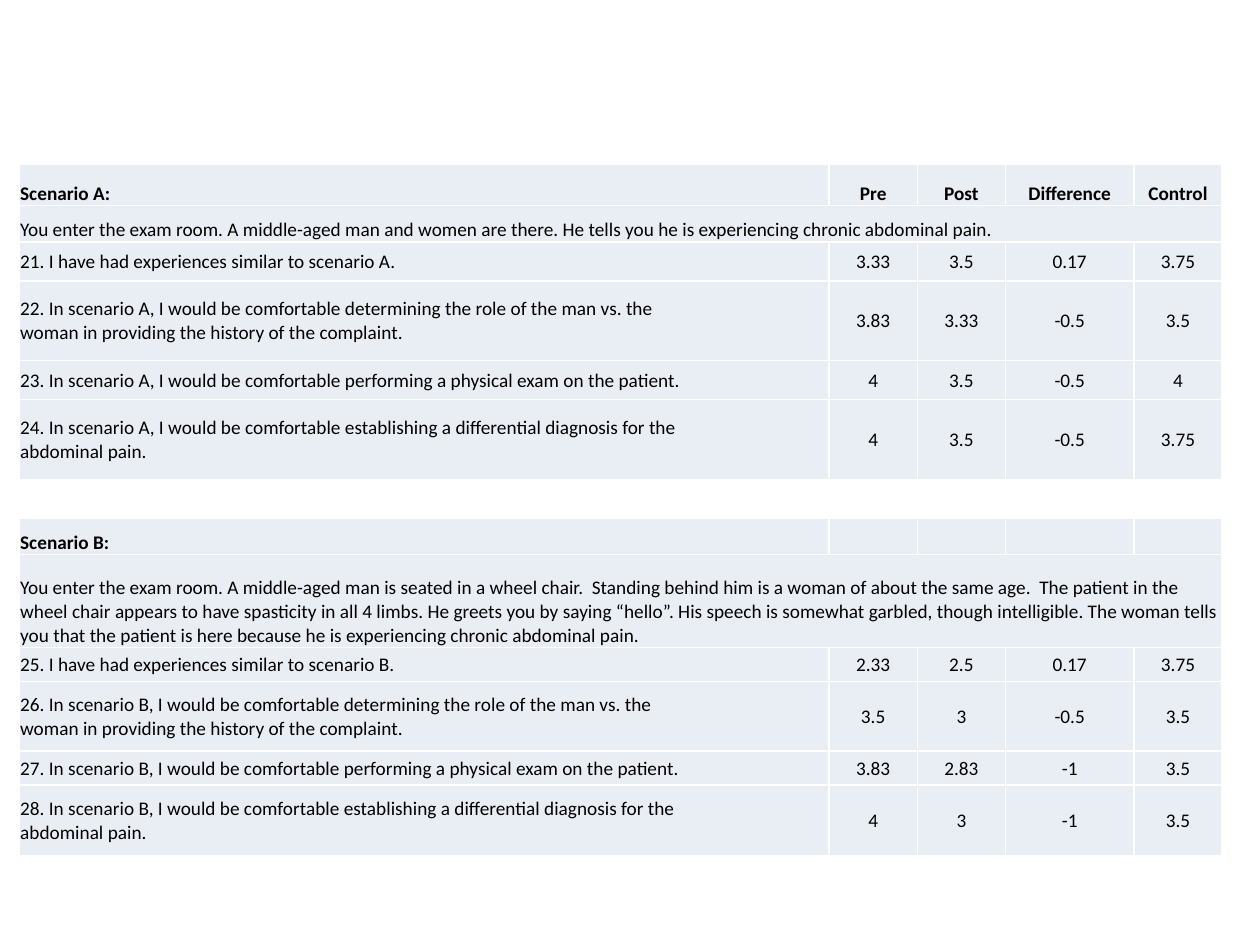
from copy import deepcopy

from lxml.etree import SubElement
from pptx import Presentation
from pptx.dml.color import RGBColor
from pptx.enum.text import MSO_ANCHOR, PP_ALIGN
from pptx.oxml.ns import qn
from pptx.util import Inches, Pt

COLUMN_WIDTHS = [6.43, 0.7, 0.7, 1.02, 0.7]
CELL_MARGINS = {"margin_left": 0.01, "margin_right": 0.01, "margin_top": 0.01, "margin_bottom": 0}
TEXT_SIZE = 11
BORDER_WIDTH = 1

SCENARIOS = [
    {
        "name": "A",
        "top": 1.3,
        "row_heights": [0.33, 0.29, 0.31, 0.63, 0.31, 0.64],
        "headings": ["Pre", "Post", "Difference", "Control"],
        "story": "You enter the exam room. A middle-aged man and women are there. "
                 "He tells you he is experiencing chronic abdominal pain.",
        "first_number": 21,
        "scores": [
            ["3.33", "3.5", "0.17", "3.75"],
            ["3.83", "3.33", "-0.5", "3.5"],
            ["4", "3.5", "-0.5", "4"],
            ["4", "3.5", "-0.5", "3.75"],
        ],
    },
    {
        "name": "B",
        "top": 4.11,
        "row_heights": [0.29, 0.74, 0.27, 0.55, 0.27, 0.56],
        "headings": [""] * 4,
        "story": "You enter the exam room. A middle-aged man is seated in a wheel chair.  "
                 "Standing behind him is a woman of about the same age.  The patient in the "
                 "wheel chair appears to have spasticity in all 4 limbs. He greets you by "
                 "saying “hello”. His speech is somewhat garbled, though intelligible. The "
                 "woman tells you that the patient is here because he is experiencing chronic "
                 "abdominal pain.",
        "first_number": 25,
        "scores": [
            ["2.33", "2.5", "0.17", "3.75"],
            ["3.5", "3", "-0.5", "3.5"],
            ["3.83", "2.83", "-1", "3.5"],
            ["4", "3", "-1", "3.5"],
        ],
    },
]

STATEMENTS = [
    "I have had experiences similar to scenario {name}.",
    "In scenario {name}, I would be comfortable determining the role of the man vs. the\n"
    "woman in providing the history of the complaint.",
    "In scenario {name}, I would be comfortable performing a physical exam on the patient.",
    "In scenario {name}, I would be comfortable establishing a differential diagnosis for the\n"
    "abdominal pain.",
]


def color(value):
    return RGBColor.from_string(value)


def fill_cell(cell, text, bold, centered, anchor):
    """Write one cell with its borders, fill, margins and text format."""
    properties = cell._tc.get_or_add_tcPr()
    for side in ("a:lnL", "a:lnR", "a:lnT", "a:lnB"):
        line = SubElement(properties, qn(side), w=str(Pt(BORDER_WIDTH)))
        SubElement(SubElement(line, qn("a:solidFill")), qn("a:srgbClr"), val="FFFFFF")
    cell.fill.solid()
    cell.fill.fore_color.rgb = color("E9EDF4")
    cell.vertical_anchor = anchor
    for margin, length in CELL_MARGINS.items():
        setattr(cell, margin, Inches(length))

    paragraph = cell.text_frame.paragraphs[0]
    paragraph.alignment = PP_ALIGN.CENTER if centered else PP_ALIGN.LEFT
    if not text:
        SubElement(paragraph._p, qn("a:endParaRPr"), sz=str(TEXT_SIZE * 100))
        return
    paragraph.text = text
    text_format = {"name": "Calibri", "size": Pt(TEXT_SIZE), "bold": bold}
    for span in paragraph.runs:
        for attribute, value in text_format.items():
            setattr(span.font, attribute, value)
        span.font.color.rgb = color("000000")
    for line_break in paragraph._p.findall(qn("a:br")):
        line_break.append(deepcopy(paragraph.runs[0]._r.rPr))


deck = Presentation()
deck.slide_width = Inches(10)
deck.slide_height = Inches(7.5)
page = deck.slides.add_slide(deck.slide_layouts[6])

for scenario in SCENARIOS:
    name = scenario["name"]
    heights = scenario["row_heights"]
    rows = [[f"Scenario {name}:"] + scenario["headings"], [scenario["story"]] + [""] * 4]
    for offset, (statement, scores) in enumerate(zip(STATEMENTS, scenario["scores"])):
        number = scenario["first_number"] + offset
        rows.append([f"{number}. {statement.format(name=name)}"] + scores)

    table = page.shapes.add_table(
        len(rows), len(COLUMN_WIDTHS), Inches(0.15), Inches(scenario["top"]),
        Inches(sum(COLUMN_WIDTHS)), Inches(sum(heights))).table
    table.first_row = False
    table.horz_banding = False
    for column, width in zip(table.columns, COLUMN_WIDTHS):
        column.width = Inches(width)
    for row, height in zip(table.rows, heights):
        row.height = Inches(height)

    table.cell(1, 0).merge(table.cell(1, 4))
    for row_index, texts in enumerate(rows):
        anchor = MSO_ANCHOR.BOTTOM if row_index < 2 else MSO_ANCHOR.MIDDLE
        for column_index, text in enumerate(texts):
            fill_cell(table.cell(row_index, column_index), text,
                      bold=row_index == 0, centered=column_index > 0, anchor=anchor)

deck.save("out.pptx")
